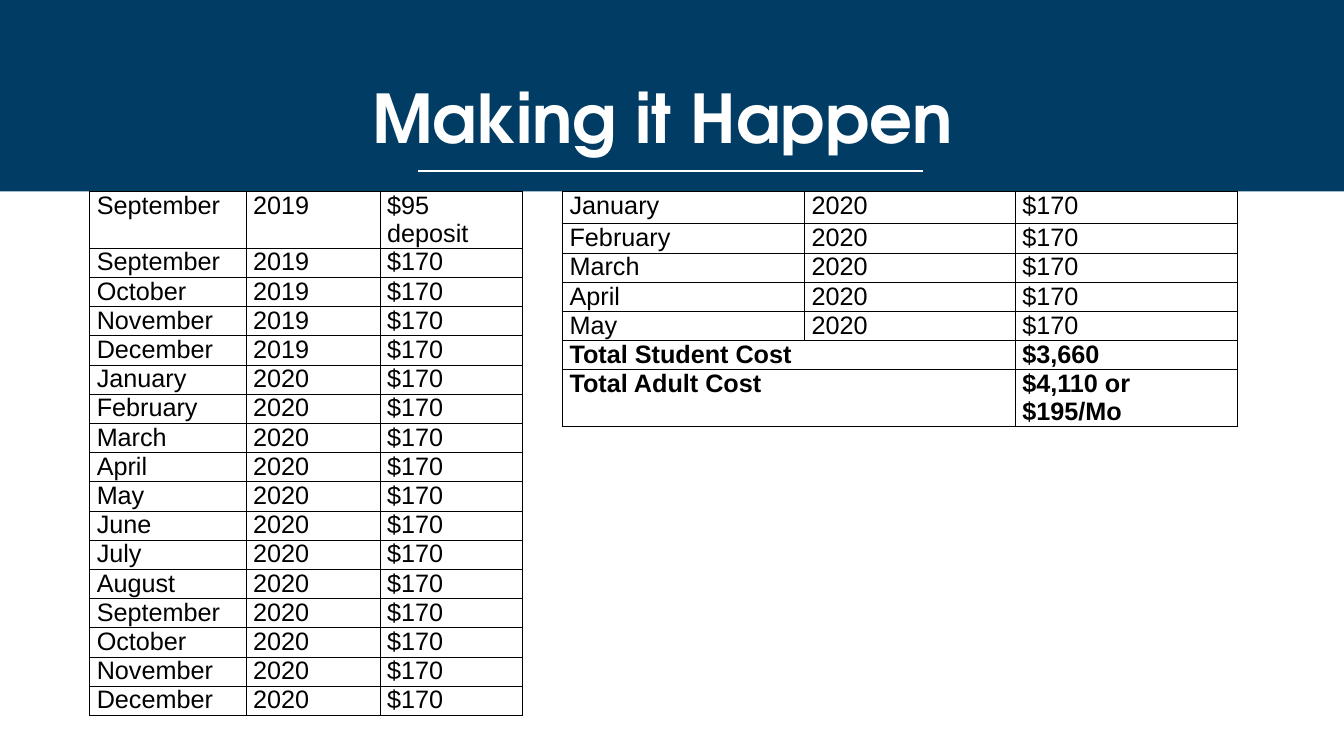
from lxml.etree import SubElement
from pptx import Presentation
from pptx.dml.color import RGBColor
from pptx.enum.shapes import MSO_CONNECTOR as Connector, MSO_SHAPE as Shape
from pptx.enum.text import MSO_ANCHOR as Anchor, MSO_AUTO_SIZE as AutoSize, PP_ALIGN as Align
from pptx.oxml.ns import qn
from pptx.util import Inches, Pt

NAVY = RGBColor(0x00, 0x3C, 0x64)
WHITE = RGBColor(0xFF, 0xFF, 0xFF)
BLACK = RGBColor(0x00, 0x00, 0x00)

BAND_HEIGHT = 1.9
FIRST_ROW, ROW = Inches(0.32), Inches(0.29)


def add_borders(cell):
    properties = cell._tc.get_or_add_tcPr()
    for position, side in enumerate(("lnL", "lnR", "lnT", "lnB")):
        line = SubElement(properties, qn(f"a:{side}"), w=str(Pt(0.5)))
        fill = SubElement(line, qn("a:solidFill"))
        SubElement(fill, qn("a:srgbClr"), val=str(BLACK))
        properties.insert(position, line)


def add_schedule(page, left, widths, entries):
    frame = page.shapes.add_table(
        len(entries), len(widths), Inches(left), Inches(BAND_HEIGHT),
        Inches(sum(widths)), FIRST_ROW + ROW * (len(entries) - 1))
    table = frame.table
    table.first_row = table.horz_banding = False
    for column, width in zip(table.columns, widths):
        column.width = Inches(width)
    for index, entry in enumerate(entries):
        table.rows[index].height = ROW if index else FIRST_ROW
        is_total = entry[0].startswith("Total")
        for cell, text in zip(table.rows[index].cells, entry):
            cell.margin_left = cell.margin_right = Inches(0.07)
            cell.margin_top = cell.margin_bottom = 0
            cell.fill.background()
            add_borders(cell)
            cell.text = text
            for para in cell.text_frame.paragraphs:
                para.font.name = "Arial"
                para.font.size = Pt(18)
                para.font.bold = is_total
                para.font.color.rgb = BLACK
        if is_total:
            table.cell(index, 0).merge(table.cell(index, 1))


deck = Presentation()
deck.slide_width, deck.slide_height = Inches(13.33), Inches(7.5)
page = deck.slides.add_slide(deck.slide_layouts[5])

# Header band, placed behind the title
band = page.shapes.add_shape(Shape.RECTANGLE, 0, 0, deck.slide_width, Inches(BAND_HEIGHT))
band.shadow.inherit = False
band.fill.solid()
band.fill.fore_color.rgb = NAVY
band.line.fill.background()
page.shapes._spTree.insert(2, band._element)

# Title
title = page.shapes.title
title.left, title.top = Inches(0.79), Inches(0.89)
title.width, title.height = Inches(11.75), Inches(0.71)
title.text_frame.text = "Making it Happen "
title.text_frame.auto_size = AutoSize.NONE
title.text_frame.vertical_anchor = Anchor.MIDDLE
para = title.text_frame.paragraphs[0]
para.alignment = Align.CENTER
para.line_spacing = 0.75
para.font.name = "TeX Gyre Adventor"
para.font.size = Pt(48)
para.font.bold = True
para.font.color.rgb = WHITE

# Rule under the title
rule = page.shapes.add_connector(
    Connector.STRAIGHT, Inches(4.15), Inches(1.7), Inches(9.15), Inches(1.7))
rule.line.color.rgb = WHITE
rule.line.width = Pt(1.5)
SubElement(rule._element.spPr, qn("a:effectLst"))

# Payment schedules
months = ["January", "February", "March", "April", "May", "June", "July",
          "August", "September", "October", "November", "December"]
monthly = "$170"
first_payments = [("September", "2019", "$95 deposit")]
first_payments += [(month, "2019", monthly) for month in months[8:]]
first_payments += [(month, "2020", monthly) for month in months]
last_payments = [(month, "2020", monthly) for month in months[:5]]
last_payments += [("Total Student Cost", "", "$3,660"),
                  ("Total Adult Cost", "", "$4,110 or\n$195/Mo")]

add_schedule(page, 0.89, (1.55, 1.33, 1.41), first_payments)
add_schedule(page, 5.58, (2.4, 2.09, 2.2), last_payments)

deck.save("out.pptx")
